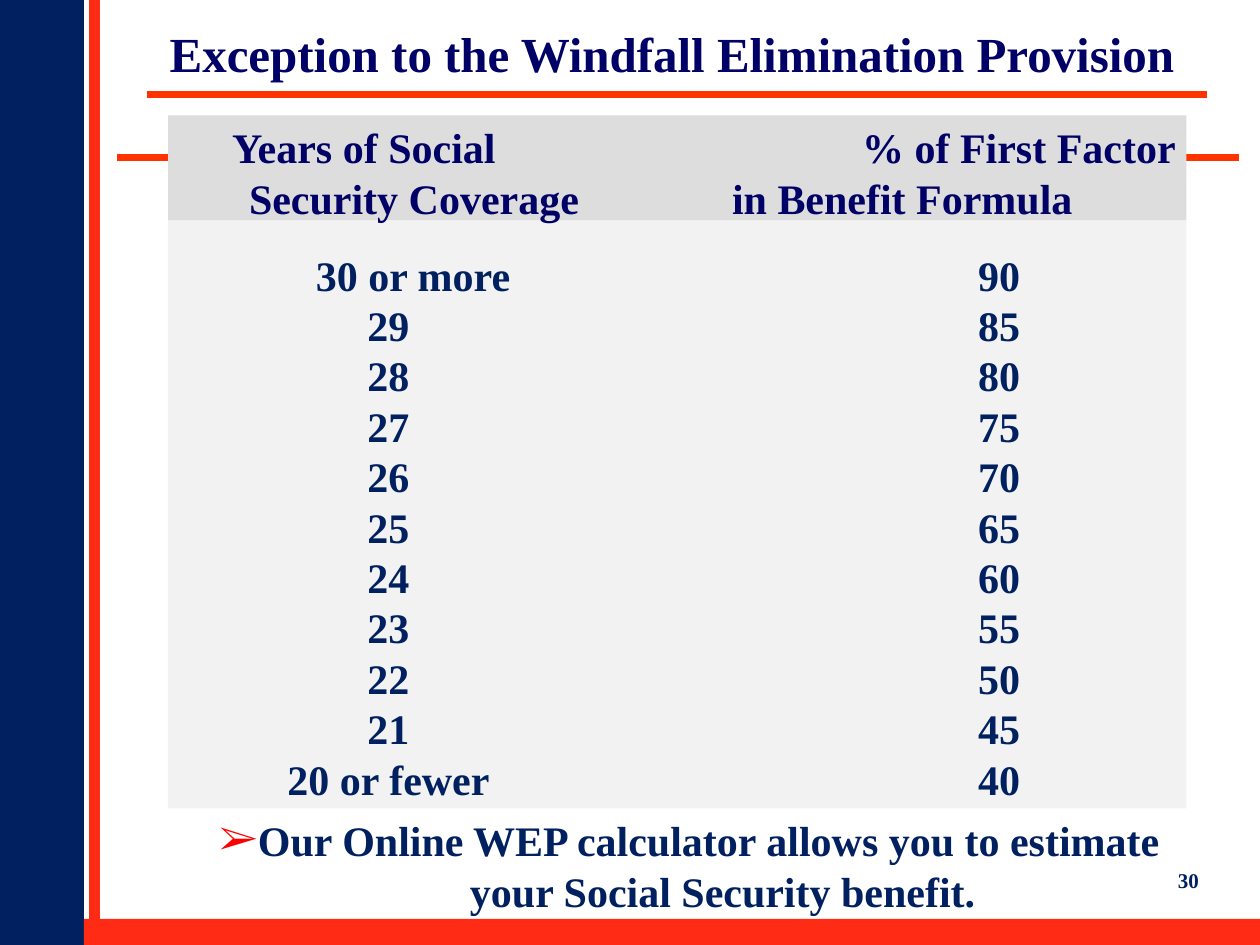
from lxml import etree
from pptx import Presentation
from pptx.dml import color as c
from pptx.enum import shapes, text
from pptx.oxml import ns
from pptx.util import Pt

NAVY = "002060"
TITLE_BLUE = "000066"
RED = "FF2B15"
ORANGE = "FF3300"
FONT = "Times New Roman"
CENTER = text.PP_ALIGN.CENTER
COVERAGE = ["30 or more", *map(str, range(29, 20, -1)), "20 or fewer"]


def rgb(value):
    return c.RGBColor.from_string(value)


def add_child(parent, tag, **attributes):
    return etree.SubElement(parent, ns.qn(tag), attributes)


def add_bar(page, left, top, width, height, fill):
    bar = page.shapes.add_shape(shapes.MSO_SHAPE.RECTANGLE,
                                Pt(left), Pt(top), Pt(width), Pt(height))
    bar.shadow.inherit = False
    bar.fill.solid()
    bar.fill.fore_color.rgb = rgb(fill)
    bar.line.fill.background()


def add_rule(page, x1, y1, x2, y2, color, width):
    rule = page.shapes.add_connector(shapes.MSO_CONNECTOR.STRAIGHT,
                                     Pt(x1), Pt(y1), Pt(x2), Pt(y2))
    rule.line.color.rgb = rgb(color)
    rule.line.width = Pt(width)
    add_child(rule._element.spPr, "a:effectLst")


def place(box, left, top, width, height, inset_x=0.0, inset_y=0.0):
    box.left, box.top, box.width, box.height = map(Pt, (left, top, width, height))
    frame = box.text_frame
    frame.word_wrap = True
    frame.auto_size = text.MSO_AUTO_SIZE.NONE
    frame.vertical_anchor = text.MSO_ANCHOR.TOP
    frame.margin_left = frame.margin_right = Pt(inset_x)
    frame.margin_top = frame.margin_bottom = Pt(inset_y)
    return frame


def add_frame(page, *bounds, **insets):
    return place(page.shapes.add_textbox(0, 0, 0, 0), *bounds, **insets)


def write(frame, words, size=24, color=NAVY, align=text.PP_ALIGN.LEFT,
          margin=0, bullet=None):
    para = frame.paragraphs[0] if not frame.text else frame.add_paragraph()
    para.alignment = align
    para.line_spacing = Pt(size * 1.2)
    para.space_before = Pt(0)
    span = para.add_run()
    span.text = words
    span.font.name = FONT
    span.font.size = Pt(size)
    span.font.bold = True
    span.font.color.rgb = rgb(color)
    props = para._p.get_or_add_pPr()
    props.set("marL", str(Pt(margin)))
    props.set("indent", "0")
    if bullet:
        add_child(add_child(props, "a:buClr"), "a:srgbClr", val="FF0000")
        add_child(props, "a:buFont", typeface=FONT)
        add_child(props, "a:buChar", char=bullet)
    else:
        add_child(props, "a:buNone")


def add_background(page):
    add_rule(page, 54, 0, 54, 540, RED, 6)
    add_bar(page, 0, 0, 48, 540, NAVY)
    add_bar(page, 48, 525, 672, 15, RED)
    add_rule(page, 67, 90, 708, 90, ORANGE, 4.5)
    add_rule(page, 84, 54, 690, 54, ORANGE, 4.5)
    write(add_frame(page, 666, 492, 41, 22, inset_x=7.2, inset_y=3.6), "30", size=12)


def add_title(page):
    frame = place(page.shapes.title, 81, 10, 606, 44, 7.2, 3.6)
    write(frame, "Exception to the Windfall Elimination Provision",
          size=28, color=TITLE_BLUE, align=CENTER)


def add_header(page):
    header = page.placeholders[1]
    page.shapes._spTree.append(header._element)
    header.fill.solid()
    header.fill.fore_color.rgb = rgb("DDDDDD")
    years = place(header, 96, 66, 582, 60, inset_y=3.6)
    write(years, "Years of Social", color=TITLE_BLUE, margin=36.6)
    write(years, "Security Coverage", color=TITLE_BLUE, margin=46.3)
    percent = add_frame(page, 414, 66, 264, 60, inset_y=3.6)
    write(percent, "% of First Factor", color=TITLE_BLUE, margin=78.6)
    write(percent, "in Benefit Formula", color=TITLE_BLUE, margin=4.3)


def add_rows(page):
    add_bar(page, 96, 126, 582, 336, "F2F2F2")
    years = add_frame(page, 122, 142.4, 200, 318)
    percent = add_frame(page, 521, 142.4, 100, 318)
    for index, coverage in enumerate(COVERAGE):
        write(years, coverage, align=CENTER, margin=0 if index else 28)
        write(percent, str(90 - 5 * index), align=CENTER)


def add_note(page):
    frame = add_frame(page, 88, 462, 612, 66, inset_x=7.2, inset_y=3.6)
    write(frame, "Our Online WEP calculator allows you to estimate",
          align=CENTER, bullet="➢")
    write(frame, "your Social Security benefit.", align=CENTER, margin=38)


def main():
    deck = Presentation()
    deck.slide_width, deck.slide_height = Pt(720), Pt(540)
    page = deck.slides.add_slide(deck.slide_layouts[1])
    add_background(page)
    add_rows(page)
    add_title(page)
    add_header(page)
    add_note(page)
    deck.save("out.pptx")


if __name__ == "__main__":
    main()
